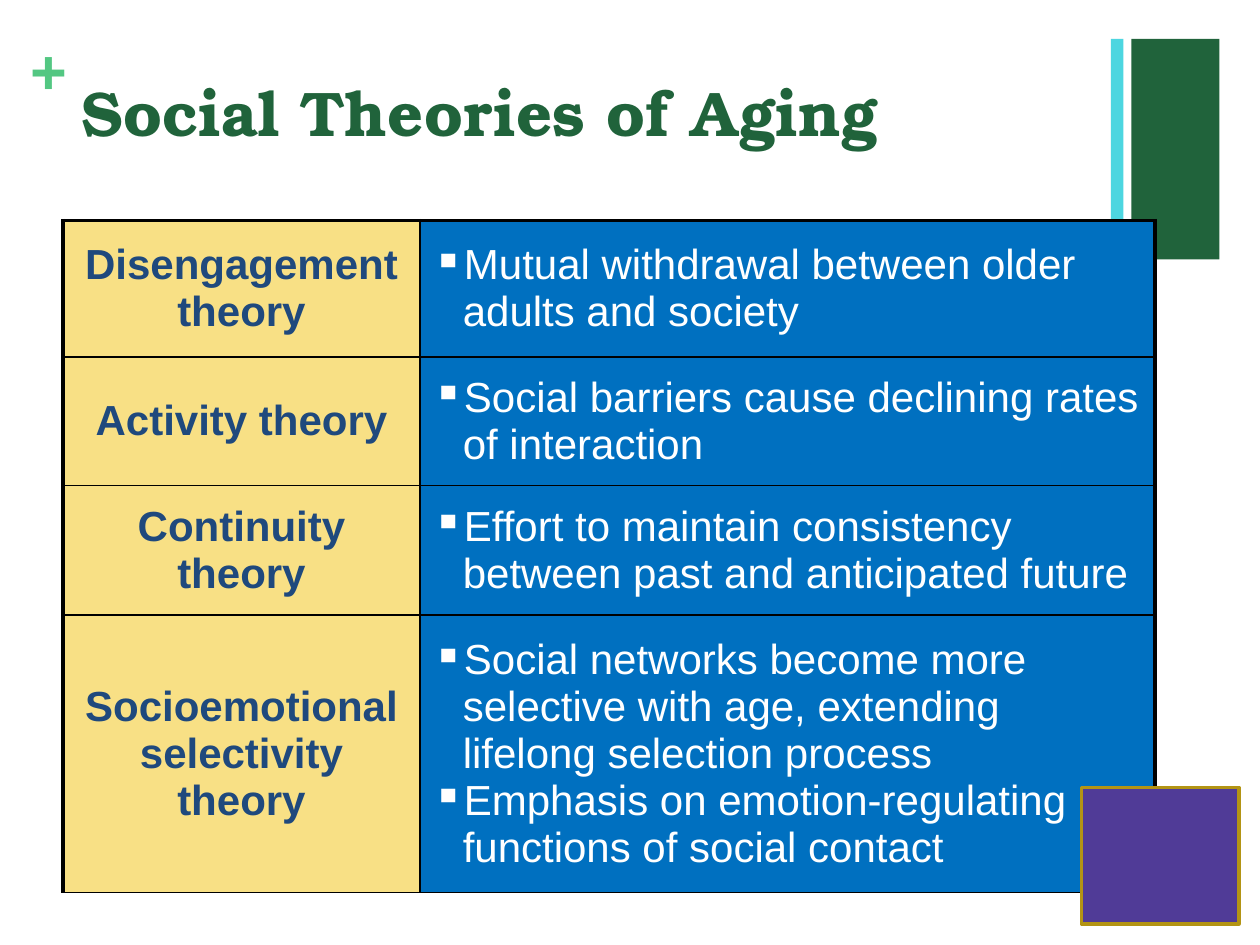
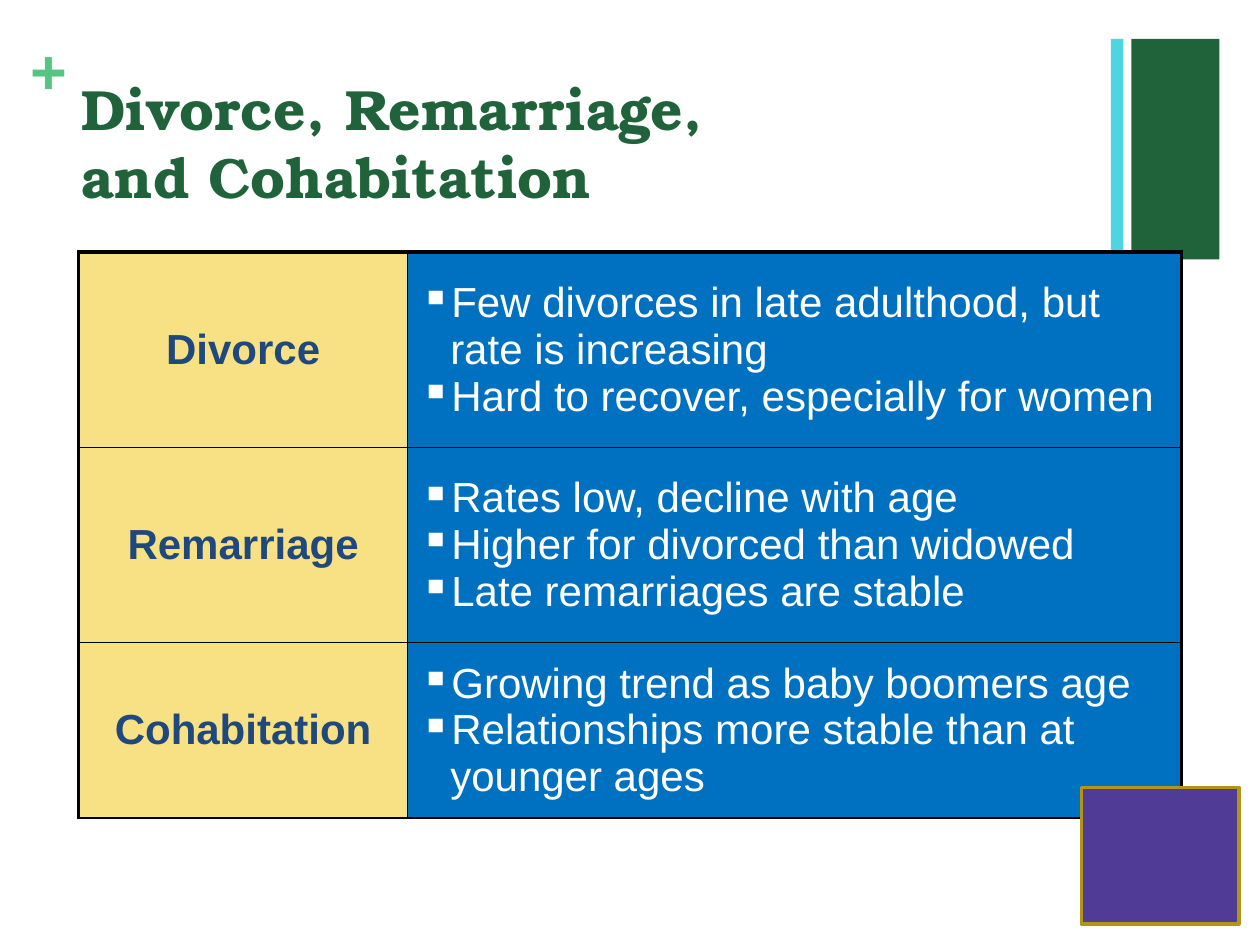
from lxml.etree import SubElement
from pptx import Presentation
from pptx.dml.color import RGBColor
from pptx.enum.shapes import MSO_SHAPE as SHAPE
from pptx.enum.text import MSO_ANCHOR as ANCHOR, PP_ALIGN as ALIGN
from pptx.oxml.ns import qn
from pptx.util import Inches, Pt

COLS, ROWS = 120, 90
BULLET_INDENT = Inches(0.24)

THEORIES = [
    ("Disengagement theory", ["Mutual withdrawal between older adults and society"]),
    ("Activity theory", ["Social barriers cause declining rates of interaction"]),
    ("Continuity theory",
     ["Effort to maintain consistency between past and anticipated future"]),
    ("Socioemotional selectivity theory",
     ["Social networks become more selective with age, extending lifelong selection process",
      "Emphasis on emotion-regulating functions of social contact"]),
]
PARTNERSHIPS = [
    ("Divorce", ["Few divorces in late adulthood, but rate is increasing",
                 "Hard to recover, especially for women"]),
    ("Remarriage", ["Rates low, decline with age",
                    "Higher for divorced than widowed",
                    "Late remarriages are stable"]),
    ("Cohabitation", ["Growing trend as baby boomers age",
                      "Relationships more stable than at younger ages"]),
]


def rgb(value):
    return RGBColor.from_string(value)


class Deck:
    GREEN, CYAN, MINT = "20633B", "4DD6E0", "53C782"
    YELLOW, BLUE, NAVY = "F3C20D", "0070C0", "1F497D"
    PURPLE, GOLD, BLACK, WHITE = "503B97", "B39414", "000000", "FFFFFF"
    BODY, HEADING = "Arial", "TeX Gyre Bonum"
    THICK, THIN = 2.25, 1

    def __init__(self):
        self.prs = Presentation()
        self.prs.slide_width, self.prs.slide_height = Inches(10), Inches(7.5)
        self.s = None

    def x(self, cols):
        return round(self.prs.slide_width * cols / COLS)

    def y(self, rows):
        return round(self.prs.slide_height * rows / ROWS)

    def box(self, left, top, width, height):
        return self.x(left), self.y(top), self.x(width), self.y(height)

    def paragraph(self, p, text, color, size=24, bold=True, name=BODY):
        p.text = text
        for r in p.runs:
            for key, value in {"size": Pt(size), "bold": bold, "name": name}.items():
                setattr(r.font, key, value)
            r.font.color.rgb = rgb(color)

    def text(self, area, text, wrap=True, margin=None, **style):
        tf = self.s.shapes.add_textbox(*self.box(*area)).text_frame
        tf.word_wrap = wrap
        if margin is not None:
            for side in ("left", "top", "right", "bottom"):
                setattr(tf, f"margin_{side}", margin)
        self.paragraph(tf.paragraphs[0], text, **style)

    def rect(self, area, fill, line=None):
        sp = self.s.shapes.add_shape(SHAPE.RECTANGLE, *self.box(*area))
        sp.shadow.inherit = False
        sp.fill.solid()
        sp.fill.fore_color.rgb = rgb(fill)
        if line:
            sp.line.color.rgb = rgb(line)
            sp.line.width = Pt(2)
        else:
            sp.line.fill.background()

    def slide(self, title, size):
        self.s = self.prs.slides.add_slide(self.prs.slide_layouts[6])
        self.rect((107.75, 3.7, 8.4, 21), self.GREEN)
        self.rect((105.8, 3.7, 1.2, 21), self.CYAN)
        self.text((2.9, 3, 3.5, 7.3), "+", wrap=False, margin=0, color=self.MINT, size=36)
        self.text((6.6, 6.4, 99.1, 14.6), title,
                  color=self.GREEN, size=size, name=self.HEADING)

    def borders(self, cell, widths):
        tc_pr = cell._tc.get_or_add_tcPr()
        for side, width in zip("LRTB", widths):
            ln = SubElement(tc_pr, qn(f"a:ln{side}"), w=str(int(Pt(width))))
            fill = SubElement(ln, qn("a:solidFill"))
            SubElement(fill, qn("a:srgbClr"), val=self.BLACK)

    def fill(self, cell, color, alpha=None):
        cell.fill.solid()
        cell.fill.fore_color.rgb = rgb(color)
        if alpha:
            clr = cell._tc.tcPr.find(qn("a:solidFill")).find(qn("a:srgbClr"))
            SubElement(clr, qn("a:alpha"), val=str(alpha * 1000))

    def bullet(self, p, text):
        self.paragraph(p, text, self.WHITE, bold=False)
        p_pr = p._p.get_or_add_pPr()
        p_pr.set("marL", str(int(BULLET_INDENT)))
        p_pr.set("indent", str(-int(BULLET_INDENT)))
        SubElement(p_pr, qn("a:buChar"), char="▪")

    def table(self, left, top, widths, heights, content):
        area = self.box(left, top, sum(widths), sum(heights))
        table = self.s.shapes.add_table(len(heights), len(widths), *area).table
        table.first_row = table.horz_banding = False
        for col, width in zip(table.columns, widths):
            col.width = self.x(width)
        for i, (height, (term, points)) in enumerate(zip(heights, content)):
            table.rows[i].height = self.y(height)
            label, detail = table.cell(i, 0), table.cell(i, 1)
            upper = self.THIN if i else self.THICK
            self.borders(label, (self.THICK, self.THIN, upper, self.THIN))
            self.borders(detail, (self.THIN, self.THICK, upper, self.THIN))
            self.fill(label, self.YELLOW, alpha=50)
            self.fill(detail, self.BLUE)
            label.vertical_anchor = detail.vertical_anchor = ANCHOR.MIDDLE
            p = label.text_frame.paragraphs[0]
            p.alignment = ALIGN.CENTER
            self.paragraph(p, term, self.NAVY)
            tf = detail.text_frame
            for j, point in enumerate(points):
                self.bullet(tf.add_paragraph() if j else tf.paragraphs[0], point)

    def corner(self):
        self.rect((103, 75, 15, 13), self.PURPLE, self.GOLD)


def main():
    deck = Deck()
    deck.slide("Social Theories of Aging", 36)
    deck.table(6, 21, (34, 70), (13, 12.25, 12.35, 26.4), THEORIES)
    deck.corner()
    deck.slide("Divorce, Remarriage,\vand Cohabitation", 32.4)
    deck.table(7.5, 24, (31.3, 73.7), (18.6, 18.6, 16.7), PARTNERSHIPS)
    deck.corner()
    deck.prs.save("out.pptx")


if __name__ == "__main__":
    main()
